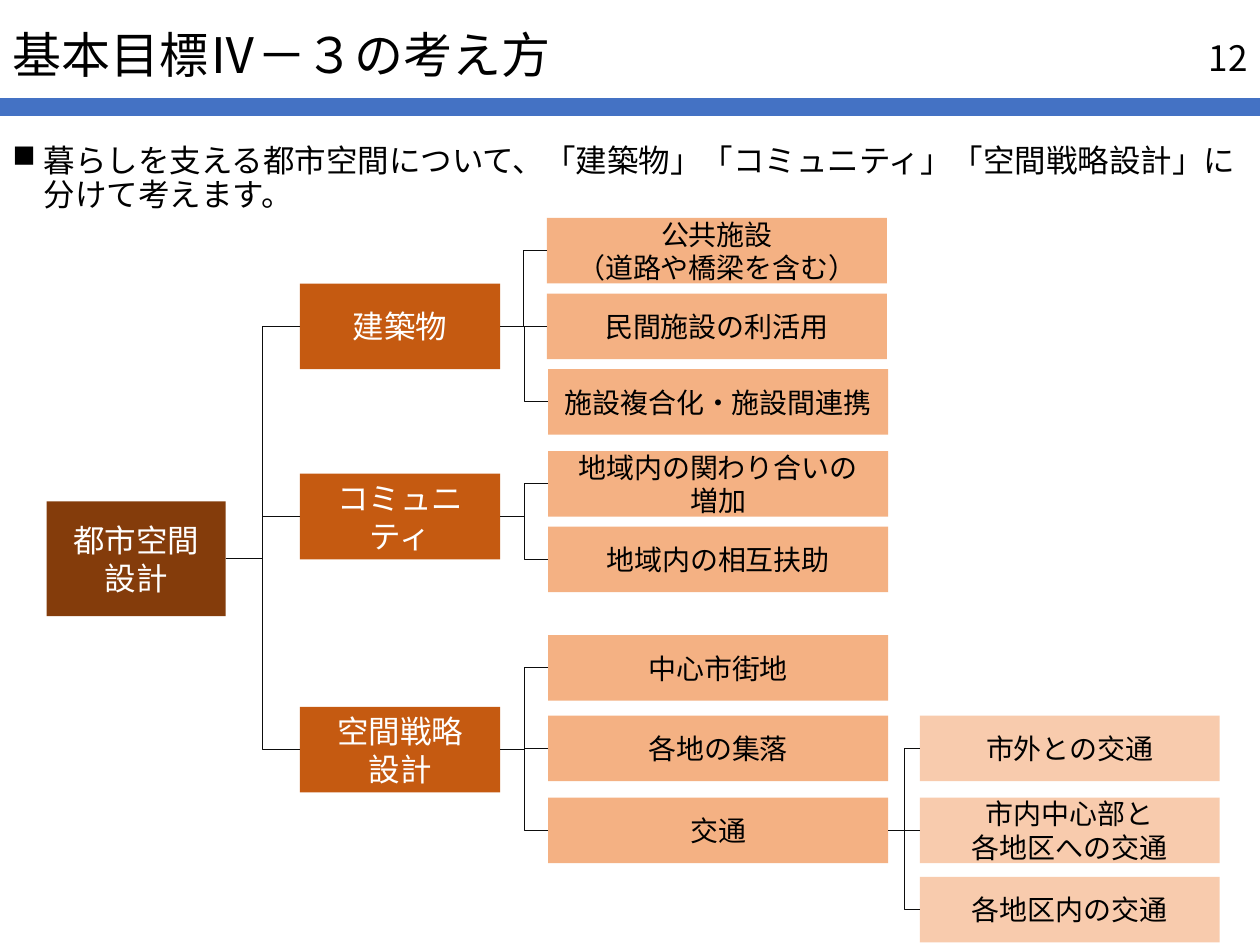
from pptx import Presentation
from pptx.util import Inches, Pt
from pptx.dml.color import RGBColor
from pptx.enum.shapes import MSO_CONNECTOR, MSO_SHAPE
from pptx.enum.text import MSO_ANCHOR, PP_ALIGN
from pptx.oxml.ns import qn
from lxml.etree import SubElement

BLACK = RGBColor(0, 0, 0)
WHITE = RGBColor(255, 255, 255)
BLUE = RGBColor(0x44, 0x72, 0xC4)
LINE = RGBColor(0x0D, 0x0D, 0x0D)
BROWN = RGBColor(0x84, 0x3C, 0x0B)
RUST = RGBColor(0xC5, 0x5A, 0x11)
PEACH = RGBColor(0xF4, 0xB1, 0x83)
PALE = RGBColor(0xF8, 0xCB, 0xAD)

LEVELS = [
    (1.42, 0.91, BROWN, WHITE, 18),
    (1.59, 0.68, RUST, WHITE, 18),
    (2.7, 0.52, PEACH, BLACK, 16),
    (2.38, 0.52, PALE, BLACK, 16),
]

TREE = ("都市空間\n設計", 0.37, 3.98, [
    ("建築物", 2.38, 2.25, [
        ("公共施設\n（道路や橋梁を含む）", 4.34, 1.73, []),
        ("民間施設の利活用", 4.34, 2.33, []),
        ("施設複合化・施設間連携", 4.35, 2.93, []),
    ]),
    ("コミュニティ", 2.38, 3.76, [
        ("地域内の関わり合いの\n増加", 4.35, 3.58, []),
        ("地域内の相互扶助", 4.35, 4.18, []),
    ]),
    ("空間戦略\n設計", 2.38, 5.61, [
        ("中心市街地", 4.35, 5.04, []),
        ("各地の集落", 4.35, 5.68, []),
        ("交通", 4.35, 6.33, [
            ("市外との交通", 7.3, 5.68, []),
            ("市内中心部と\n各地区への交通", 7.3, 6.33, []),
            ("各地区内の交通", 7.3, 6.96, []),
        ]),
    ]),
])


class Deck:
    font = "Noto Sans CJK JP"

    def __init__(self):
        self.file = Presentation()
        self.file.slide_width = Inches(10)
        self.file.slide_height = Inches(7.5)
        self.slide = self.file.slides.add_slide(self.file.slide_layouts[6])

    def label(self, shape, words, size, color, align, anchor=MSO_ANCHOR.MIDDLE):
        frame = shape.text_frame
        frame.word_wrap = True
        frame.vertical_anchor = anchor
        frame.text = words
        for para in frame.paragraphs:
            para.alignment = align
            para.font.size = Pt(size)
            para.font.name = self.font
            para.font.color.rgb = color
            style = para._p.pPr.find(qn("a:defRPr"))
            SubElement(style, qn("a:ea"), typeface=self.font)
        return frame.paragraphs[0]

    def text(self, words, x, y, w, h, size, align=PP_ALIGN.LEFT,
             anchor=MSO_ANCHOR.MIDDLE):
        box = self.slide.shapes.add_textbox(
            Inches(x), Inches(y), Inches(w), Inches(h))
        return self.label(box, words, size, BLACK, align, anchor)

    def bullet(self, words, x, y, w, h, size):
        para = self.text(words, x, y, w, h, size, anchor=MSO_ANCHOR.TOP)
        para.line_spacing = 0.9
        para.space_before = Pt(10)
        props = para._p.pPr
        props.set("marL", str(Inches(0.25)))
        props.set("indent", str(-Inches(0.25)))
        mark = SubElement(props, qn("a:buChar"), char="■")
        props.find(qn("a:defRPr")).addprevious(mark)

    def rect(self, x, y, w, h, fill):
        shape = self.slide.shapes.add_shape(
            MSO_SHAPE.RECTANGLE, Inches(x), Inches(y), Inches(w), Inches(h))
        shape.shadow.inherit = False
        shape.fill.solid()
        shape.fill.fore_color.rgb = fill
        shape.line.fill.background()
        return shape

    def link(self, start, end):
        line = self.slide.shapes.add_connector(MSO_CONNECTOR.ELBOW, 0, 0, 0, 0)
        line.begin_connect(start, 3)
        line.end_connect(end, 1)
        line.line.color.rgb = LINE
        line.line.width = Pt(0.5)
        SubElement(line._element.spPr, qn("a:effectLst"))

    def tree(self, node, depth=0):
        words, x, y, kids = node
        w, h, fill, color, size = LEVELS[depth]
        box = self.rect(x, y, w, h, fill)
        self.label(box, words, size, color, PP_ALIGN.CENTER)
        for kid in kids:
            self.link(box, self.tree(kid, depth + 1))
        return box


def main():
    deck = Deck()
    deck.rect(0, 0.78, 10, 0.14, BLUE)
    title = deck.text("基本目標Ⅳ－３の考え方", 0, 0.31, 7.75, 0.29, 28)
    title.line_spacing = 0.9
    deck.bullet("暮らしを支える都市空間について、「建築物」「コミュニティ」"
                "「空間戦略設計」に分けて考えます。", 0, 1.1, 10, 0.78, 18)
    deck.text("12", 7.75, 0.26, 2.25, 0.4, 20, PP_ALIGN.RIGHT)
    deck.tree(TREE)
    deck.file.save("out.pptx")


if __name__ == "__main__":
    main()
